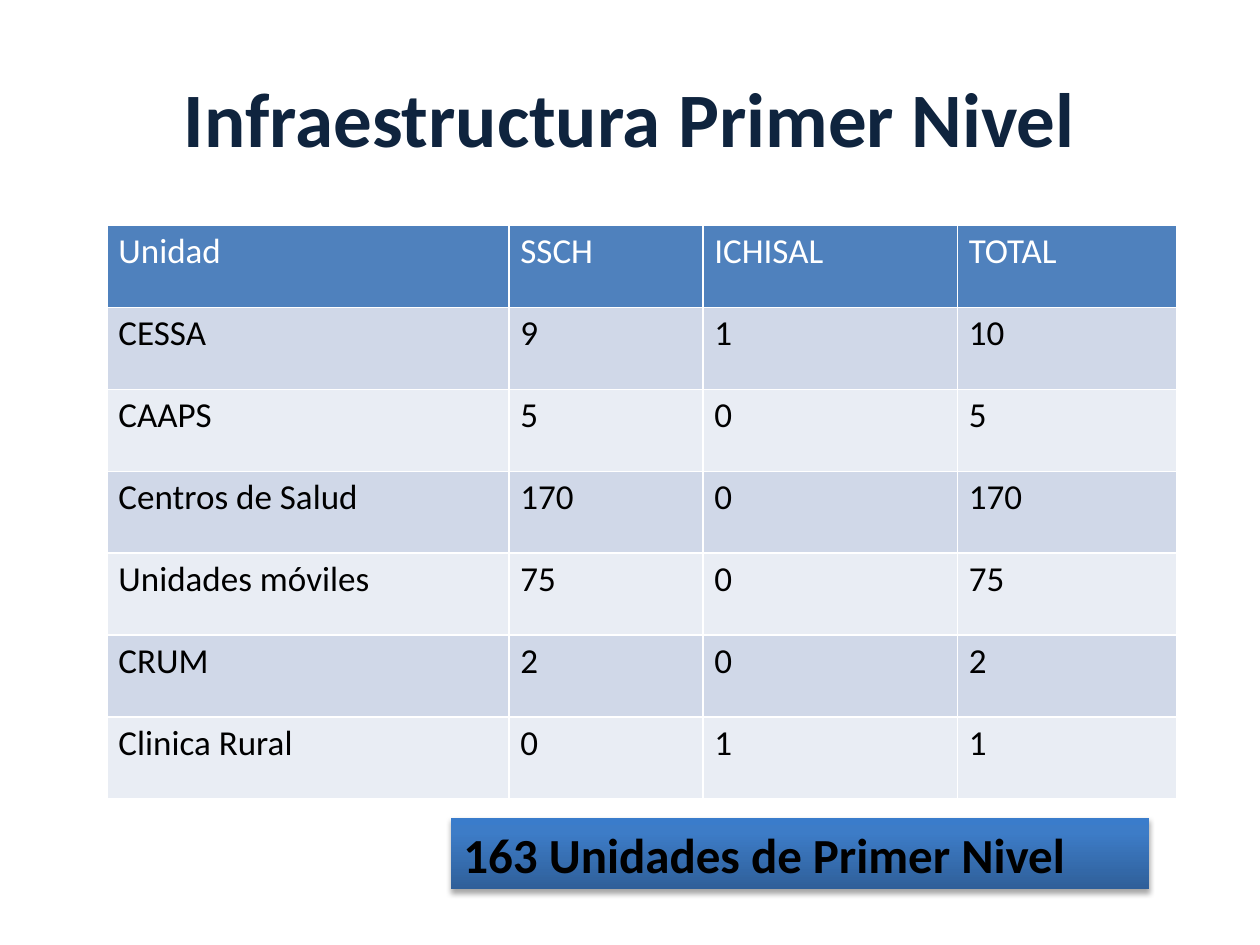
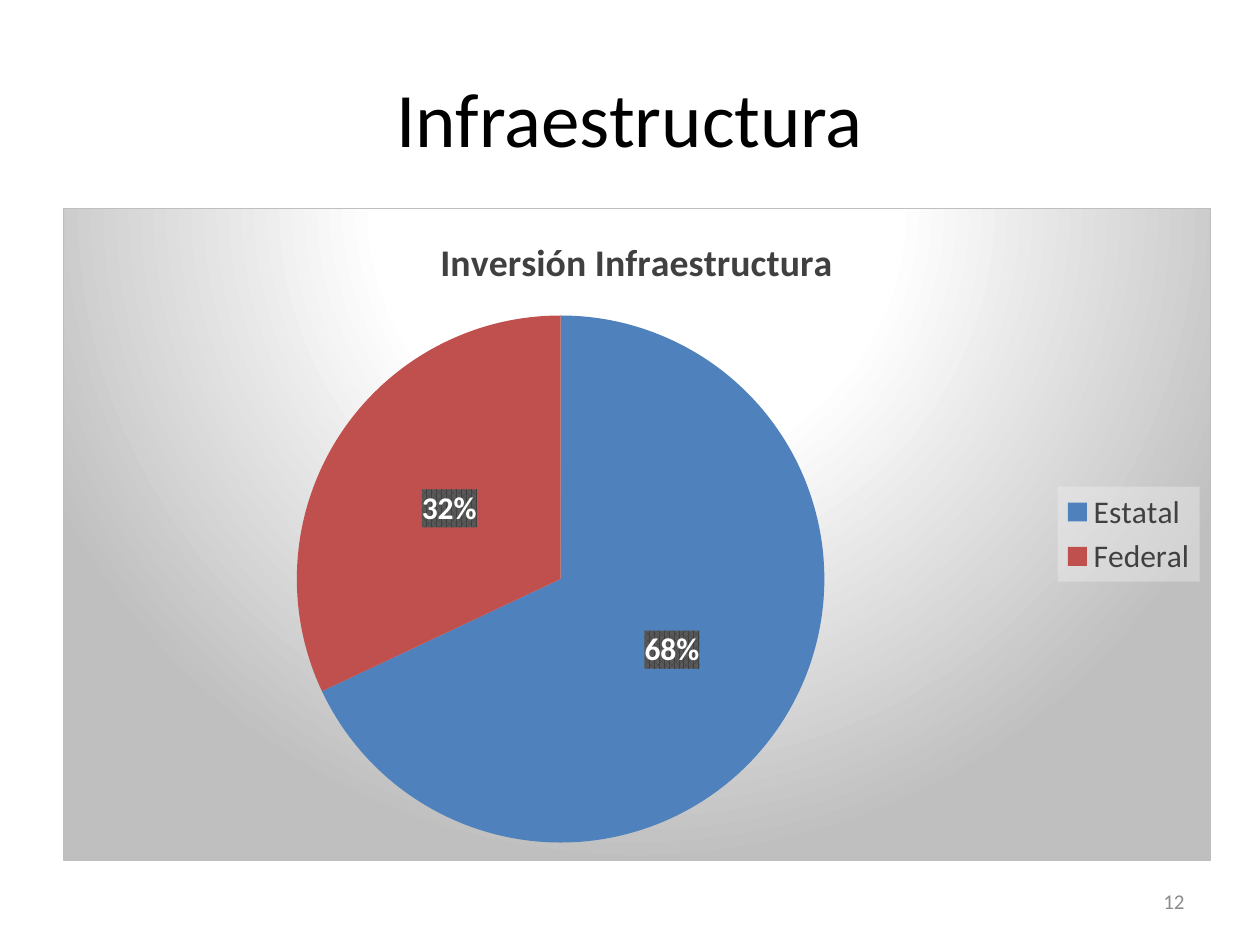
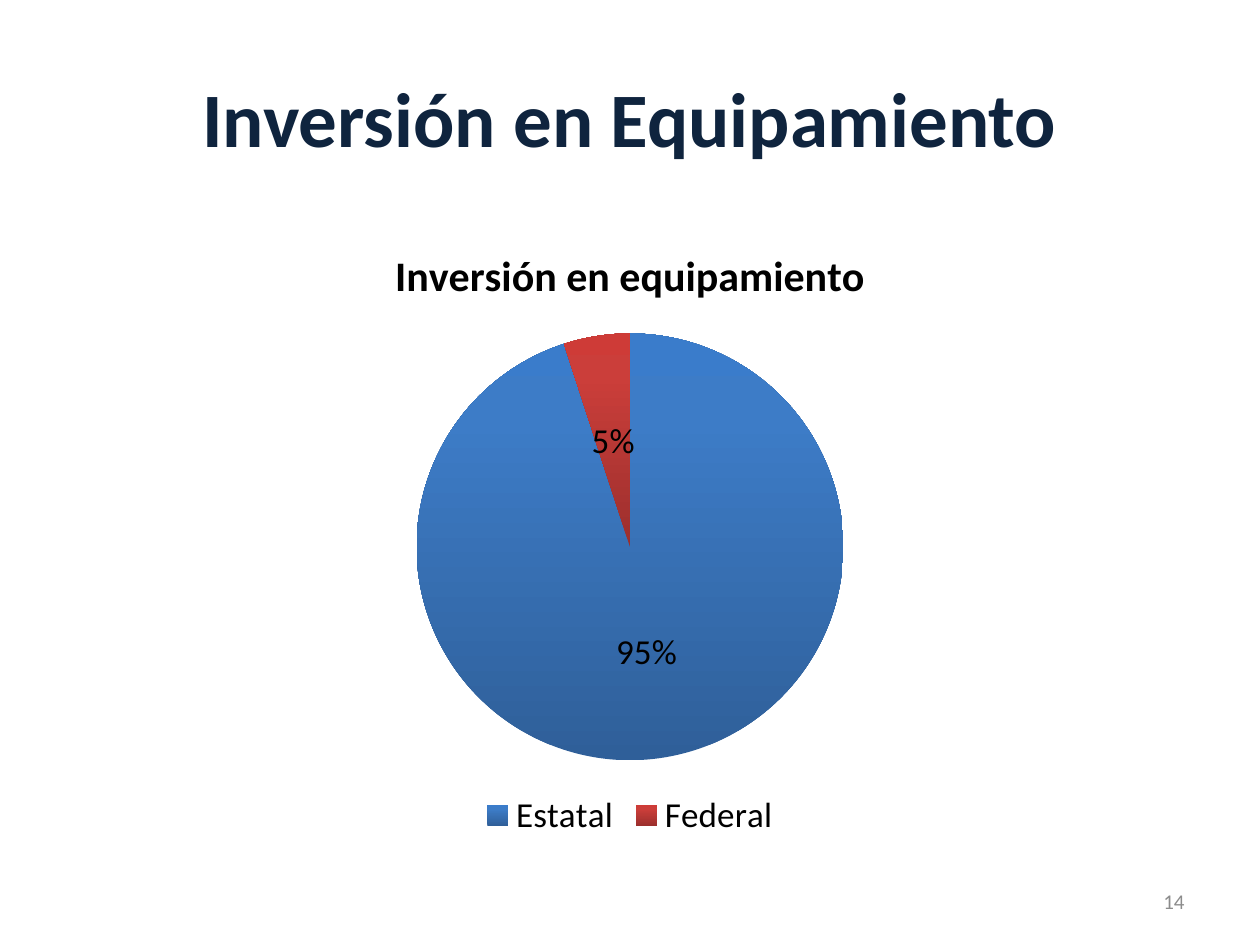
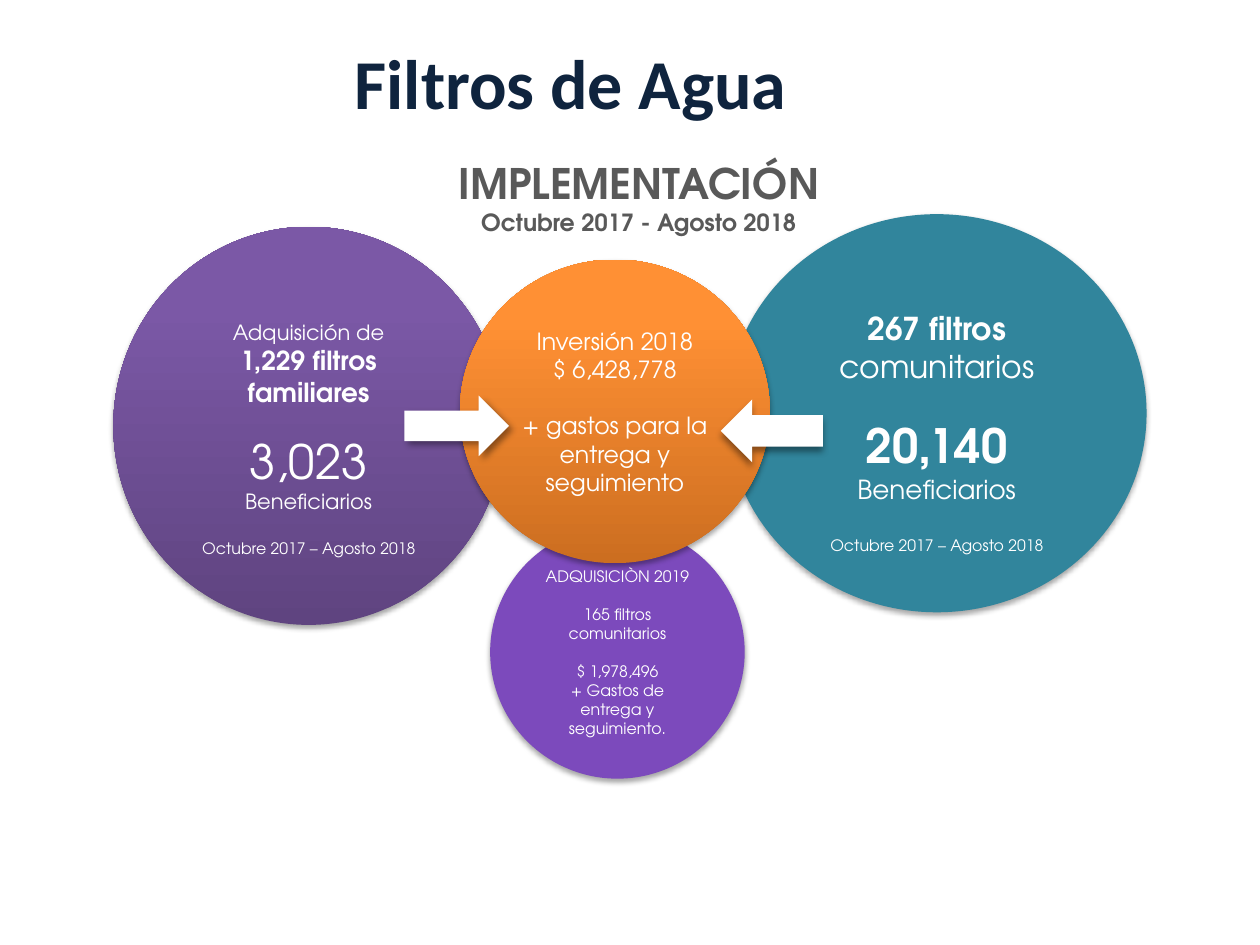
from lxml.etree import SubElement
from pptx import Presentation
from pptx.chart.data import CategoryChartData
from pptx.dml.color import RGBColor
from pptx.enum.chart import XL_CHART_TYPE as ChartType, XL_LABEL_POSITION as LabelPos
from pptx.enum.chart import XL_LEGEND_POSITION as LegendPos
from pptx.enum.shapes import MSO_SHAPE as Preset
from pptx.enum.text import MSO_ANCHOR as Anchor, PP_ALIGN as Align
from pptx.oxml import parse_xml
from pptx.oxml.ns import nsdecls, qn
from pptx.util import Pt

PX = 9144  # 100 px to the inch
NAVY = RGBColor(0x0F, 0x24, 0x3E)
BLACK = RGBColor(0, 0, 0)
WHITE = RGBColor(0xFF, 0xFF, 0xFF)
DARK_GREY = RGBColor(0x40, 0x40, 0x40)
HEADING_GREY = RGBColor(0x59, 0x59, 0x59)
NUMBER_GREY = RGBColor(0x8C, 0x8C, 0x8C)
BLUE = RGBColor(0x4F, 0x81, 0xBD)
RED = RGBColor(0xC0, 0x50, 0x4D)
DARK_BAND = RGBColor(0xD0, 0xD8, 0xE8)
LIGHT_BAND = RGBColor(0xE9, 0xED, 0xF4)
TEAL = RGBColor(0x31, 0x85, 0x9C)
VIOLET = RGBColor(0x7C, 0x4A, 0xBC)

BLUE_FADE = [(0, "2F5F99"), (80, "3D7CC7"), (100, "3A7CCB")]
RED_FADE = [(0, "9C2F2D"), (80, "CB3E3A"), (100, "CE3B37")]
PURPLE_FADE = [(0, "5F4480"), (80, "7B58A6"), (100, "7C57A8")]
ORANGE_FADE = [(0, "CC6E20"), (80, "FF9034"), (100, "FF9136")]
GREY_GLOW = [(0, "FFFFFF"), (39, "FFFFFF"), (100, "BFBFBF")]
UPWARD = '<a:lin ang="16200000" scaled="0"/>'
FROM_TOP = ('<a:path path="circle"><a:fillToRect l="50000" t="-80000" '
            'r="50000" b="180000"/></a:path>')

BODY_FONT = "Calibri"
CIRCLE_FONT = "TeX Gyre Adventor"
# opacity %, blur pt, distance pt, angle
SOFT_SHADOW = (35, 3.1, 1.8, 90)
ARROW_SHADOWS = [(40, 4, 3, 45), (40, 4, 3, 90)]


def apply_gradient(parent, stops, direction=UPWARD):
    """Replace the first empty fill inside parent by a gradient."""
    marks = "".join(f'<a:gs pos="{pos * 1000}"><a:srgbClr val="{color}"/></a:gs>'
                    for pos, color in stops)
    empty = next(parent.iter(qn("a:noFill")))
    empty.getparent().replace(empty, parse_xml(
        f'<a:gradFill {nsdecls("a")} rotWithShape="1"><a:gsLst>{marks}</a:gsLst>'
        f'{direction}</a:gradFill>'))


def write(frame, lines, color, font=BODY_FONT, align=Align.CENTER):
    """Write lines of (space before, [(text, size, bold), ...])."""
    for index, (gap, pieces) in enumerate(lines):
        line = frame.add_paragraph() if index else frame.paragraphs[0]
        line.alignment = align
        if gap:
            line.space_before = Pt(gap)
        for text, size, bold in pieces:
            run = line.add_run()
            run.text = text
            look = {"name": font, "size": Pt(size), "bold": bold}
            for key, value in look.items():
                setattr(run.font, key, value)
            run.font.color.rgb = color


prs = Presentation()
prs.slide_width, prs.slide_height = 1000 * PX, 750 * PX
raised = []

# Titles and page numbers
slides = []
for title, size, bold, color, page in [
    ("Infraestructura Primer Nivel", 44, True, NAVY, None),
    ("Infraestructura", 44, False, BLACK, "12"),
    ("Inversión en Equipamiento", 44, True, NAVY, "14"),
    ("Filtros de Agua", 40, True, NAVY, None),
]:
    slide = prs.slides.add_slide(prs.slide_layouts[5])
    write(slide.shapes.title.text_frame, [(0, [(title, size, bold)])], color)
    if page:
        number = slide.shapes.add_textbox(717 * PX, 695 * PX, 233 * PX, 40 * PX).text_frame
        number.word_wrap = True
        number.vertical_anchor = Anchor.MIDDLE
        write(number, [(0, [(page, 12, False)])], NUMBER_GREY, align=Align.RIGHT)
    slides.append(slide)
units_slide, works_slide, equipment_slide, filters_slide = slides

# Slide 1: units by institution
units = [
    ("Unidad", "SSCH", "ICHISAL", "TOTAL"),
    ("CESSA", "9", "1", "10"),
    ("CAAPS", "5", "0", "5"),
    ("Centros de Salud", "170", "0", "170"),
    ("Unidades móviles", "75", "0", "75"),
    ("CRUM", "2", "0", "2"),
    ("Clinica Rural", "0", "1", "1"),
]
table = units_slide.shapes.add_table(
    len(units), 4, 85 * PX, 179 * PX, 849 * PX, 455 * PX).table
for column, width in zip(table.columns, (319, 154, 202, 174)):
    column.width = width * PX
margins = {"margin_left": 9, "margin_right": 9, "margin_top": 4, "margin_bottom": 4}
for r, values in enumerate(units):
    table.rows[r].height = 65 * PX
    for c, value in enumerate(values):
        cell = table.cell(r, c)
        for side, margin in margins.items():
            setattr(cell, side, margin * PX)
        cell.fill.solid()
        cell.fill.fore_color.rgb = BLUE if r == 0 else DARK_BAND if r % 2 else LIGHT_BAND
        write(cell.text_frame, [(0, [(value, 20, False)])],
              BLACK if r else WHITE, align=Align.LEFT)

total = units_slide.shapes.add_shape(
    Preset.RECTANGLE, 358 * PX, 649 * PX, 554 * PX, 57 * PX)
total.fill.background()
apply_gradient(total._element.spPr, BLUE_FADE)
total.line.fill.background()
write(total.text_frame, [(0, [("163 Unidades de Primer Nivel", 28, True)])],
      BLACK, align=Align.LEFT)
raised.append((total, SOFT_SHADOW))

# Slides 2 and 3: investment pies
pies = []
for slide, heading, shares, box, size, heading_size, text_color, label_color, bold, side in [
    (works_slide, "Inversión Infraestructura", (68, 32), (50, 165, 911, 518),
     18, 21.6, DARK_GREY, WHITE, True, LegendPos.RIGHT),
    (equipment_slide, "Inversión en equipamiento", (95, 5), (50, 175, 900, 495),
     20, 24, BLACK, BLACK, False, LegendPos.BOTTOM),
]:
    data = CategoryChartData()
    data.categories = ["Estatal", "Federal"]
    data.add_series(heading, shares)
    pie = slide.shapes.add_chart(ChartType.PIE, *(n * PX for n in box), data).chart
    pie.font.name, pie.font.size = BODY_FONT, Pt(size)
    pie.font.color.rgb = BLACK
    pie.has_title = True
    write(pie.chart_title.text_frame, [(0, [(heading, heading_size, True)])], text_color)
    pie.chart_title.include_in_layout = False
    pie.has_legend = True
    pie.legend.position = side
    pie.legend.include_in_layout = False
    plot = pie.plots[0]
    plot.vary_by_categories = True
    plot.has_data_labels = True
    labels = plot.data_labels
    for key, value in {"show_percentage": True, "show_value": False,
                       "number_format": "0%", "number_format_is_linked": False,
                       "position": LabelPos.CENTER}.items():
        setattr(labels, key, value)
    for font, color, weight in [(pie.legend.font, text_color, False),
                                (labels.font, label_color, bold)]:
        font.name, font.size, font.bold = BODY_FONT, Pt(size), weight
        font.color.rgb = color
    pies.append(pie)
works_pie, equipment_pie = pies

for index, (color, fade) in enumerate([(BLUE, BLUE_FADE), (RED, RED_FADE)]):
    flat = works_pie.plots[0].series[0].points[index].format.fill
    flat.solid()
    flat.fore_color.rgb = color
    equipment_pie.plots[0].series[0].points[index].format.fill.background()
    apply_gradient(equipment_pie._chartSpace, fade)

chart_space = works_pie._chartSpace
for part, look in [
    (chart_space, '<a:noFill/><a:ln w="9525"><a:solidFill><a:srgbClr val="BFBFBF"/>'
                  '</a:solidFill></a:ln>'),
    (next(chart_space.iter(qn("c:legend"))),
     '<a:solidFill><a:srgbClr val="F2F2F2"><a:alpha val="39000"/></a:srgbClr></a:solidFill>'),
    (next(chart_space.iter(qn("c:dLbls"))),
     '<a:pattFill prst="pct75"><a:fgClr><a:srgbClr val="404040"/></a:fgClr>'
     '<a:bgClr><a:srgbClr val="595959"/></a:bgClr></a:pattFill>'),
]:
    part.find(qn("c:txPr")).addprevious(
        parse_xml(f'<c:spPr {nsdecls("c", "a")}>{look}</c:spPr>'))
apply_gradient(chart_space.find(qn("c:spPr")), GREY_GLOW, FROM_TOP)

# Slide 4: water filters
title = filters_slide.shapes.title
title.left, title.top, title.width, title.height = (n * PX for n in (90, 26, 726, 77))

period = filters_slide.shapes.add_textbox(351 * PX, 120 * PX, 312 * PX, 73 * PX).text_frame
period.word_wrap = False
write(period, [(0, [("IMPLEMENTACIÓN", 24, True)]),
               (0, [("Octubre 2017 - Agosto 2018", 13.5, True)])],
      HEADING_GREY, CIRCLE_FONT)

dates = "Octubre 2017 – Agosto 2018"
for box, fill, top_margin, lines in [
    ((577, 170, 333, 316), TEAL, 35, [
        (0, [("267 filtros ", 18, True), ("comunitarios", 18, False)]),
        (18, [("20,140", 27, True), (" Beneficiarios", 15, False)]),
        (18, [(dates, 9, False)])]),
    ((90, 180, 310, 316), PURPLE_FADE, 25, [
        (0, [("Adquisición de", 12, False)]),
        (0, [("1,229 filtros", 15, True)]),
        (0, [("familiares", 15, True)]),
        (14, [("3,023", 27, False)]),
        (0, [("Beneficiarios", 12, False)]),
        (14, [(dates, 9, False)])]),
    ((389, 417, 202, 201), VIOLET, 5, [
        (0, [("ADQUISICIÒN 2019", 9, False)]),
        (11, [("165 filtros comunitarios", 9, False)]),
        (11, [("$ 1,978,496", 9, False)]),
        (0, [("+ Gastos de entrega y seguimiento.", 9, False)])]),
    ((365, 206, 246, 241), ORANGE_FADE, 5, [
        (0, [("Inversión 2018", 13.5, False)]),
        (0, [("$ 6,428,778", 13.5, False)]),
        (16, [("+ gastos para la entrega y seguimiento", 13.5, False)])]),
]:
    circle = filters_slide.shapes.add_shape(Preset.OVAL, *(n * PX for n in box))
    if isinstance(fill, RGBColor):
        circle.fill.solid()
        circle.fill.fore_color.rgb = fill
    else:
        circle.fill.background()
        apply_gradient(circle._element.spPr, fill)
    circle.line.fill.background()
    circle.text_frame.word_wrap = True
    circle.text_frame.vertical_anchor = Anchor.MIDDLE
    circle.text_frame.margin_top = top_margin * PX
    write(circle.text_frame, lines, WHITE, CIRCLE_FONT)
    raised.append((circle, SOFT_SHADOW))

for box, turn, shadow in zip([(321, 314, 83, 48), (572, 317, 81, 50)],
                             (0, 180), ARROW_SHADOWS):
    arrow = filters_slide.shapes.add_shape(Preset.RIGHT_ARROW, *(n * PX for n in box))
    arrow.rotation = turn
    arrow.fill.solid()
    arrow.fill.fore_color.rgb = WHITE
    arrow.line.fill.background()
    raised.append((arrow, shadow))

# Shadows
for shape, (opacity, blur, distance, angle) in raised:
    shape.shadow.inherit = False
    effects = shape._element.spPr.find(qn("a:effectLst"))
    shade = SubElement(effects, qn("a:outerShdw"), blurRad=str(Pt(blur)),
                       dist=str(Pt(distance)), dir=str(angle * 60000), rotWithShape="0")
    tint = SubElement(shade, qn("a:srgbClr"), val="000000")
    SubElement(tint, qn("a:alpha"), val=str(opacity * 1000))

prs.save("out.pptx")
